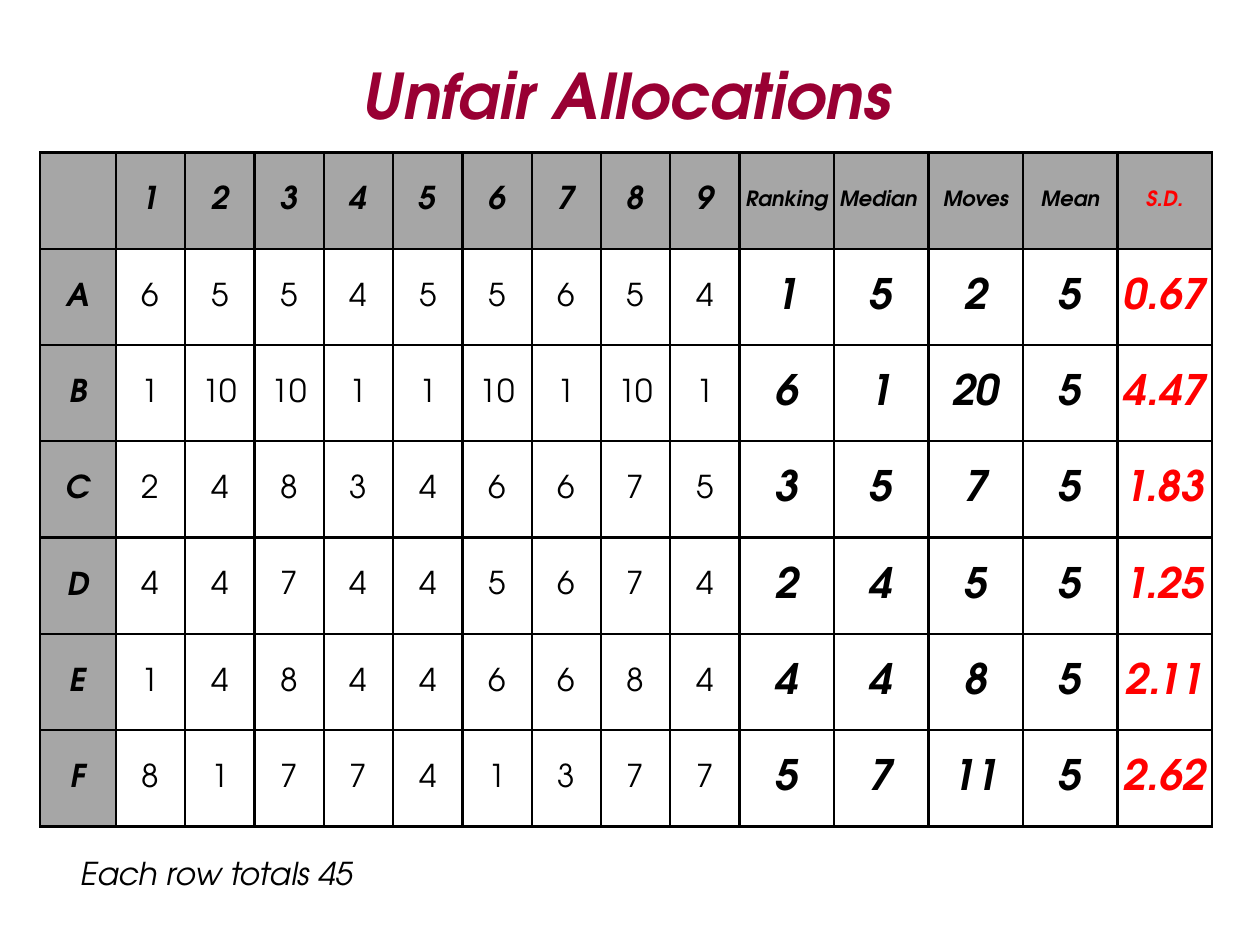
from lxml.etree import SubElement
from pptx import Presentation
from pptx.dml.color import RGBColor
from pptx.enum.text import MSO_ANCHOR as Anchor, MSO_AUTO_SIZE as Fit, PP_ALIGN as Align
from pptx.oxml.ns import qn
from pptx.util import Inches, Pt

FONT = "TeX Gyre Adventor"
BLACK = RGBColor(0x00, 0x00, 0x00)
RED = RGBColor(0xFF, 0x00, 0x00)
WINE = RGBColor(0x99, 0x00, 0x33)
GRAY = RGBColor(0xA6, 0xA6, 0xA6)

# Row label, nine shares, then ranking, median, moves, mean, S.D.
SHARES = 9
HEAD = ["", *map(str, range(1, SHARES + 1)),
        "Ranking", "Median ", "Moves", "Mean", "S.D."]
ROWS = [line.split() for line in (
    "A 6 5 5 4 5 5 6 5 4 1 5 2 5 0.67",
    "B 1 10 10 1 1 10 1 10 1 6 1 20 5 4.47",
    "C 2 4 8 3 4 6 6 7 5 3 5 7 5 1.83",
    "D 4 4 7 4 4 5 6 7 4 2 4 5 5 1.25",
    "E 1 4 8 4 4 6 6 8 4 4 4 8 5 2.11",
    "F 8 1 7 7 4 1 3 7 7 5 7 11 5 2.62",
)]
WIDTHS = [0.6] + [0.55] * SHARES + [0.75] * 5
HEIGHT = 5.35


def add_run(para, text, size, color=BLACK, bold=True, italic=True):
    run = para.add_run()
    run.text = text
    font = run.font
    font.name, font.size = FONT, Pt(size)
    font.bold, font.italic = bold, italic
    font.color.rgb = color


def add_edges(cell):
    """Draw a black line on all four sides; must come before the fill."""
    props = cell._tc.get_or_add_tcPr()
    for side in ("a:lnL", "a:lnR", "a:lnT", "a:lnB"):
        line = SubElement(props, qn(side), w=str(Pt(1.5)))
        fill = SubElement(line, qn("a:solidFill"))
        SubElement(fill, qn("a:srgbClr"), val=str(BLACK))


def fill_cell(cell, text, row, col):
    head, label = row == 0, col == 0
    stat = col > SHARES
    add_edges(cell)
    if head or label:
        cell.fill.solid()
        cell.fill.fore_color.rgb = GRAY
    else:
        cell.fill.background()
    cell.vertical_anchor = Anchor.MIDDLE
    cell.margin_left = cell.margin_right = cell.margin_top = Inches(0.01)
    cell.margin_bottom = 0
    para = cell.text_frame.paragraphs[0]
    para.alignment = Align.CENTER
    if text:
        size = (12 if head else 24) if stat else 18
        color = RED if col == len(HEAD) - 1 else BLACK
        strong = head or label or stat
        add_run(para, text, size, color, strong, strong)


def add_grid(slide):
    data = [HEAD, *ROWS]
    table = slide.shapes.add_table(
        len(data), len(HEAD), Inches(0.32), Inches(1.21),
        Inches(sum(WIDTHS)), Inches(HEIGHT)).table
    table.first_row = table.horz_banding = False
    for col, width in zip(table.columns, WIDTHS):
        col.width = Inches(width)
    for r, texts in enumerate(data):
        table.rows[r].height = Inches(HEIGHT / len(data))
        for c, text in enumerate(texts):
            fill_cell(table.cell(r, c), text, r, c)


def set_title(slide, text):
    title = slide.shapes.title
    title.left, title.top = Inches(2.78), Inches(0.4)
    title.width, title.height = Inches(4.44), Inches(0.71)
    frame = title.text_frame
    frame.word_wrap = False
    frame.auto_size = Fit.SHAPE_TO_FIT_TEXT
    frame.vertical_anchor = Anchor.TOP
    para = frame.paragraphs[0]
    para.alignment = Align.LEFT
    add_run(para, text, 36, WINE)


def add_note(slide, text):
    box = slide.shapes.add_textbox(
        Inches(0.54), Inches(6.73), Inches(2.8), Inches(0.4))
    frame = box.text_frame
    frame.word_wrap = True
    frame.auto_size = Fit.SHAPE_TO_FIT_TEXT
    add_run(frame.paragraphs[0], text, 18, bold=False)


def main():
    deck = Presentation()
    deck.slide_width, deck.slide_height = Inches(10), Inches(7.5)
    slide = deck.slides.add_slide(deck.slide_layouts[5])
    add_grid(slide)
    set_title(slide, "Unfair Allocations")
    add_note(slide, "Each row totals 45")
    deck.save("out.pptx")


if __name__ == "__main__":
    main()
